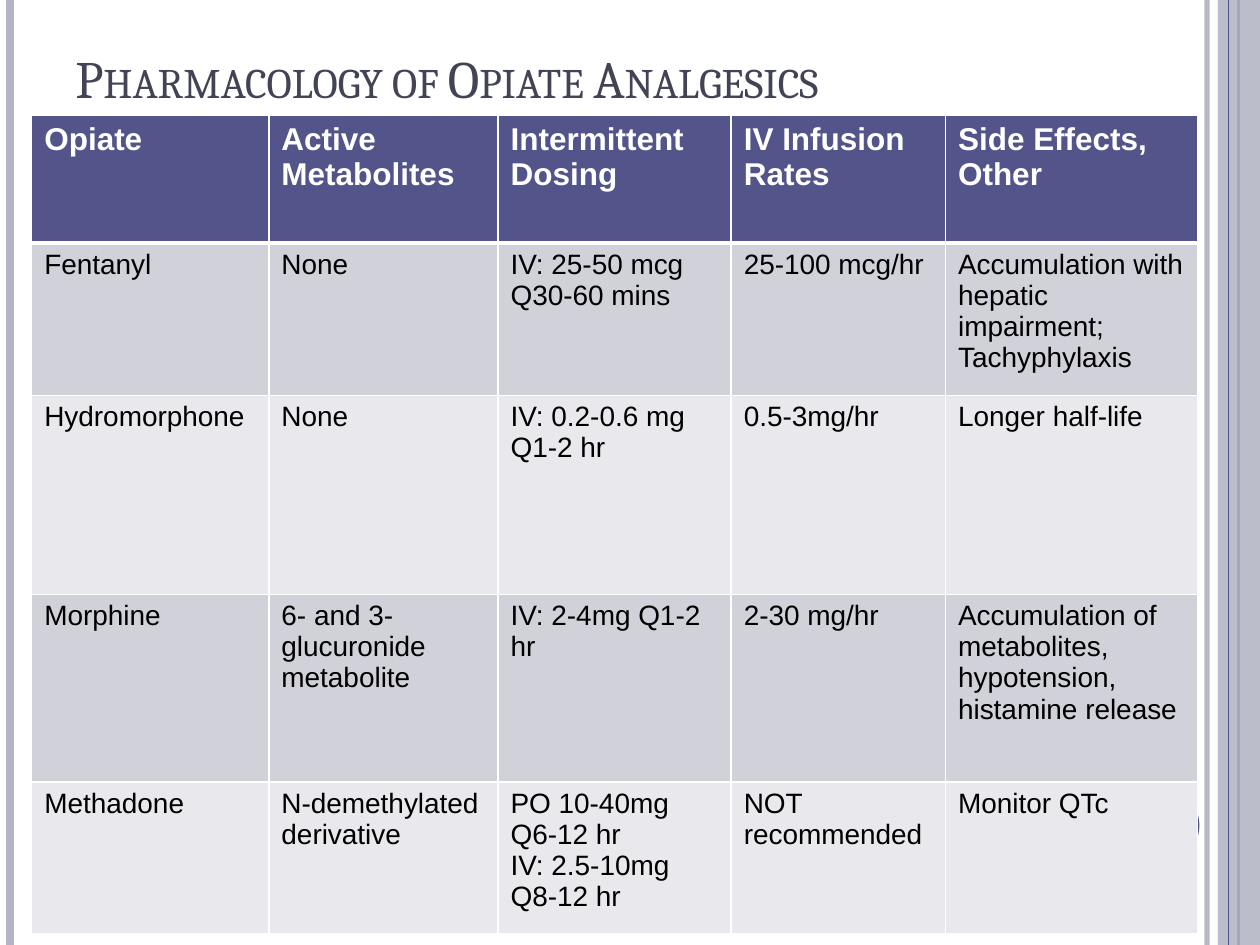
from lxml.etree import SubElement
from pptx import Presentation
from pptx.dml.color import RGBColor
from pptx.enum.shapes import MSO_CONNECTOR as Connector, MSO_SHAPE as Shape
from pptx.enum.text import MSO_ANCHOR as Anchor
from pptx.oxml.ns import qn
from pptx.util import Cm, Pt

# Content
TITLE = "Pharmacology of Opiate Analgesics"
ROWS = [
    ["Opiate", "Active Metabolites", "Intermittent Dosing",
     "IV Infusion Rates", "Side Effects, Other"],
    ["Fentanyl", "None", "IV: 25-50 mcg Q30-60 mins", "25-100 mcg/hr",
     "Accumulation with hepatic impairment; Tachyphylaxis"],
    ["Hydromorphone", "None", "IV: 0.2-0.6 mg Q1-2 hr", "0.5-3mg/hr",
     "Longer half-life"],
    ["Morphine", "6- and 3- glucuronide metabolite", "IV: 2-4mg Q1-2 hr",
     "2-30 mg/hr",
     "Accumulation of metabolites, hypotension, histamine release"],
    ["Methadone", "N-demethylated derivative",
     "PO 10-40mg Q6-12 hr\nIV: 2.5-10mg Q8-12 hr", "NOT recommended",
     "Monitor QTc"],
]

# Format values, lengths in centimetres
PAGE_W, PAGE_H = 25.4, 19.05
COL_WIDTHS = [4.78, 4.62, 4.7, 4.32, 5.08]
ROW_HEIGHTS = [2.57, 3.07, 4.01, 3.78, 3.07]
INDIGO, LILAC, WHITE = "53548A", "B3B4C4", "FFFFFF"
BANDS = ["D1D1DA", "E9E9ED"]
TITLE_FONT = {"name": "Cambria", "size": Pt(30), "color": "424456"}
HEAD_FONT = {"name": "Arial", "size": Pt(18), "bold": True, "color": WHITE}
BODY_FONT = {"name": "Arial", "size": Pt(16), "bold": False, "color": "000000"}
# Upright rules: x, colour, points, opacity in percent
RULES = [(24.33, LILAC, 3, 93), (0.2, LILAC, 4.5, 100),
         (24.97, INDIGO, 1.5, 100)]
FRONT_RULE = (24.76, INDIGO, 0.75, 100)


def paint(fill, color, opacity=100):
    fill.solid()
    fill.fore_color.rgb = RGBColor.from_string(color)
    if opacity < 100:
        tint = fill._xPr.find(".//" + qn("a:srgbClr"))
        SubElement(tint, qn("a:alpha"), val=str(opacity * 1000))


def style(font, values):
    for name, value in values.items():
        if name == "color":
            font.color.rgb = RGBColor.from_string(value)
        else:
            setattr(font, name, value)


def add_rule(page, x, color, width, opacity):
    rule = page.shapes.add_connector(
        Connector.STRAIGHT, Cm(x), Cm(0), Cm(x), Cm(PAGE_H))
    rule.line.width = Pt(width)
    paint(rule.line.fill, color, opacity)
    SubElement(rule._element.spPr, qn("a:effectLst"))


def add_block(page, kind, place, color, opacity=100):
    block = page.shapes.add_shape(kind, *map(Cm, place))
    block.shadow.inherit = False
    block.line.fill.background()
    paint(block.fill, color, opacity)


def add_borders(cell, top, bottom):
    properties = cell._tc.get_or_add_tcPr()
    for side, width in (("L", 1), ("R", 1), ("T", top), ("B", bottom)):
        edge = SubElement(properties, qn("a:ln" + side), w=str(Pt(width)))
        solid = SubElement(edge, qn("a:solidFill"))
        SubElement(solid, qn("a:srgbClr"), val=WHITE)


deck = Presentation()
deck.slide_width, deck.slide_height = Cm(PAGE_W), Cm(PAGE_H)
page = deck.slides.add_slide(deck.slide_layouts[6])

# Side decoration
for rule in RULES:
    add_rule(page, *rule)
add_block(page, Shape.RECTANGLE, (24.55, 0, 0.85, PAGE_H), LILAC, 87)
add_rule(page, *FRONT_RULE)
add_block(page, Shape.OVAL, (22.66, 15.88, 1.52, 1.52), INDIGO)

# Title in small capitals
box = page.shapes.add_textbox(Cm(1.27), Cm(0.76), Cm(20.75), Cm(1.57))
frame = box.text_frame
frame.word_wrap, frame.vertical_anchor = True, Anchor.BOTTOM
span = frame.paragraphs[0].add_run()
span.text = TITLE
style(span.font, TITLE_FONT)
span._r.get_or_add_rPr().set("cap", "small")

# Table
table = page.shapes.add_table(
    len(ROWS), len(COL_WIDTHS), Cm(0.64), Cm(2.33),
    Cm(sum(COL_WIDTHS)), Cm(sum(ROW_HEIGHTS))).table
for column, width in zip(table.columns, COL_WIDTHS):
    column.width = Cm(width)
for r, (texts, height) in enumerate(zip(ROWS, ROW_HEIGHTS)):
    table.rows[r].height = Cm(height)
    head = r == 0
    for c, text in enumerate(texts):
        cell = table.cell(r, c)
        add_borders(cell, 3 if r == 1 else 1, 3 if head else 1)
        paint(cell.fill, INDIGO if head else BANDS[(r - 1) % 2])
        cell.text_frame.text = text
        for para in cell.text_frame.paragraphs:
            for span in para.runs:
                style(span.font, HEAD_FONT if head else BODY_FONT)

deck.save("out.pptx")
